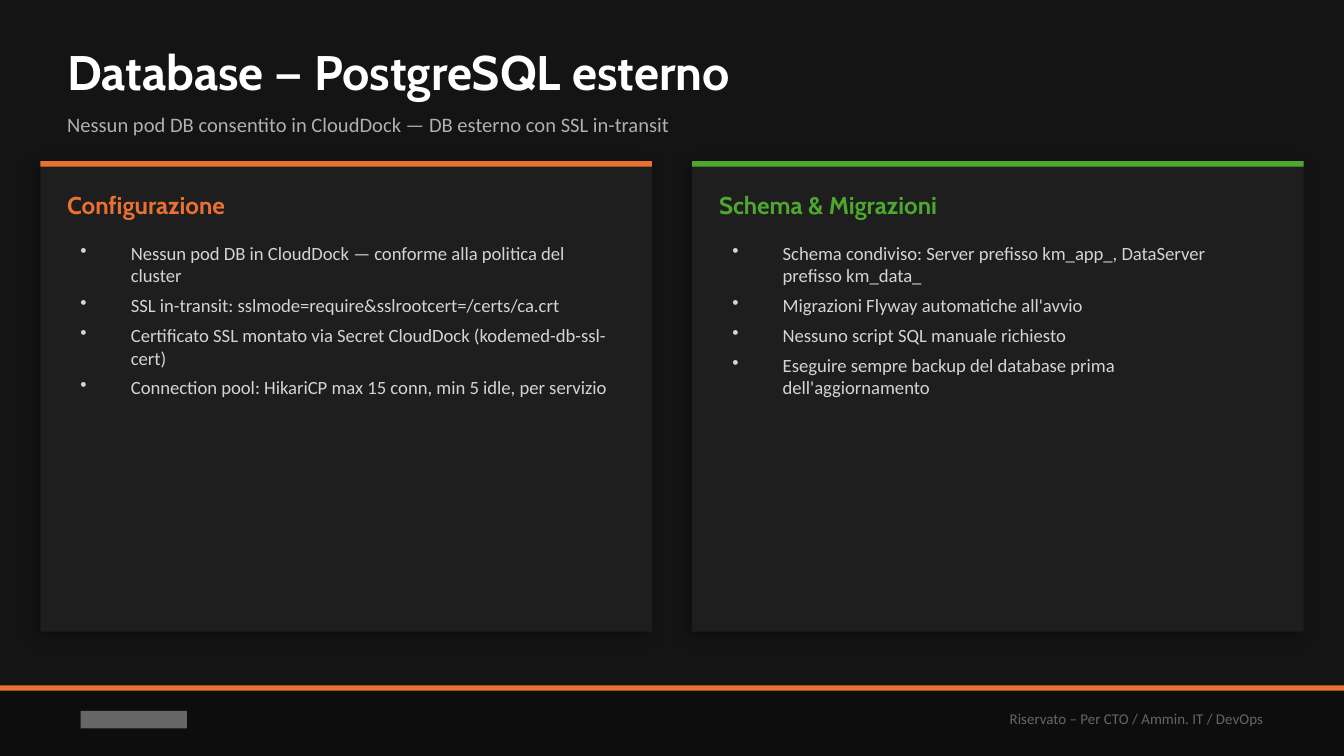
"""Build the external database slide with two topic cards."""
from dataclasses import dataclass

from lxml import etree
from pptx import Presentation
from pptx.dml.color import RGBColor
from pptx.enum.shapes import MSO_SHAPE
from pptx.enum.text import MSO_ANCHOR, PP_ALIGN
from pptx.oxml.ns import qn
from pptx.util import Pt

RECT = MSO_SHAPE.RECTANGLE
TOP, MIDDLE = MSO_ANCHOR.TOP, MSO_ANCHOR.MIDDLE
LEFT, RIGHT = PP_ALIGN.LEFT, PP_ALIGN.RIGHT
SCALE = 4572
WIDTH, HEIGHT = 2000, 1125


@dataclass(frozen=True)
class Theme:
    back: str = "141414"
    foot: str = "0D0D0D"
    card: str = "1E1E1E"
    orange: str = "E97132"
    green: str = "4EA72E"
    white: str = "FFFFFF"
    soft: str = "B0B0B0"
    body: str = "D4D4D4"
    dim: str = "666666"
    shade: str = "000000"
    head_font: str = "Cabin"
    body_font: str = "Calibri"
    title_size: int = 26
    head_size: int = 13
    lead_size: int = 11
    list_size: int = 10
    note_size: int = 8


def px(count):
    return count * SCALE


def write(para, text, *, size, color, font, bold=False):
    run = para.add_run()
    run.text = text
    run.font.size = Pt(size)
    run.font.name = font
    run.font.bold = bold
    run.font.color.rgb = RGBColor.from_string(color)


class Deck:
    def __init__(self, theme):
        self.theme = theme
        self.show = Presentation()
        self.show.slide_width = px(WIDTH)
        self.show.slide_height = px(HEIGHT)
        self.slide = self.show.slides.add_slide(self.show.slide_layouts[6])
        fill = self.slide.background.fill
        fill.solid()
        fill.fore_color.rgb = RGBColor.from_string(theme.back)

    def rect(self, area, color, shadow=False):
        shape = self.slide.shapes.add_shape(RECT, *map(px, area))
        shape.shadow.inherit = False
        shape.fill.solid()
        shape.fill.fore_color.rgb = RGBColor.from_string(color)
        shape.line.fill.background()
        if shadow:
            self.shade(shape)

    def shade(self, shape):
        effects = shape.element.spPr.find(qn("a:effectLst"))
        outer = etree.SubElement(
            effects, qn("a:outerShdw"), blurRad=str(Pt(8)), dist=str(Pt(3)),
            dir=str(135 * 60000), algn="bl", rotWithShape="0")
        tint = etree.SubElement(outer, qn("a:srgbClr"), val=self.theme.shade)
        etree.SubElement(tint, qn("a:alpha"), val="35000")

    def frame(self, area, anchor=MIDDLE, inset=True):
        frame = self.slide.shapes.add_textbox(*map(px, area)).text_frame
        frame.word_wrap = True
        frame.vertical_anchor = anchor
        frame.margin_left = frame.margin_right = px(20 if inset else 0)
        frame.margin_top = frame.margin_bottom = px(10 if inset else 0)
        return frame

    def label(self, area, text, align=LEFT, inset=False, **style):
        para = self.frame(area, inset=inset).paragraphs[0]
        para.alignment = align
        write(para, text, **style)

    def bullets(self, area, items):
        theme = self.theme
        frame = self.frame(area, TOP)
        for place, item in enumerate(items):
            para = frame.add_paragraph() if place else frame.paragraphs[0]
            props = para._p.get_or_add_pPr()
            props.set("marL", str(px(75)))
            props.set("indent", str(px(-75)))
            etree.SubElement(props, qn("a:buSzPct"), val="100000")
            etree.SubElement(props, qn("a:buChar"), char="•")
            para.space_after = Pt(4)
            write(para, item, size=theme.list_size, color=theme.body,
                  font=theme.body_font)

    def card(self, left, color, head, items):
        theme = self.theme
        self.rect((left, 240, 910, 700), theme.card, shadow=True)
        self.rect((left, 240, 910, 8), color)
        self.label((left + 40, 270, 830, 70), head, size=theme.head_size,
                   color=color, font=theme.head_font, bold=True)
        self.bullets((left + 40, 350, 830, 560), items)

    def footer(self, note):
        theme = self.theme
        self.rect((0, 1020, WIDTH, 105), theme.foot)
        self.rect((0, 1020, WIDTH, 8), theme.orange)
        self.rect((120, 1058, 158, 26), theme.dim)
        self.label((1100, 1030, 800, 80), note, align=RIGHT, inset=True,
                   size=theme.note_size, color=theme.dim, font=theme.body_font)


def main():
    theme = Theme()
    deck = Deck(theme)
    deck.footer("Riservato – Per CTO / Ammin. IT / DevOps")
    deck.label((100, 50, 1800, 110), "Database — PostgreSQL esterno",
               size=theme.title_size, color=theme.white,
               font=theme.head_font, bold=True)
    deck.label((100, 150, 1800, 70),
               "Nessun pod DB consentito in CloudDock — "
               "DB esterno con SSL in-transit",
               size=theme.lead_size, color=theme.soft, font=theme.body_font)
    cards = (
        (theme.orange, "Configurazione", (
            "Nessun pod DB in CloudDock — conforme alla politica del cluster",
            "SSL in-transit: sslmode=require&sslrootcert=/certs/ca.crt",
            "Certificato SSL montato via Secret CloudDock "
            "(kodemed-db-ssl-cert)",
            "Connection pool: HikariCP max 15 conn, min 5 idle, per servizio",
        )),
        (theme.green, "Schema & Migrazioni", (
            "Schema condiviso: Server prefisso km_app_, "
            "DataServer prefisso km_data_",
            "Migrazioni Flyway automatiche all'avvio",
            "Nessuno script SQL manuale richiesto",
            "Eseguire sempre backup del database prima dell'aggiornamento",
        )),
    )
    for place, (color, head, items) in enumerate(cards):
        deck.card(60 + place * 970, color, head, items)
    deck.show.save("out.pptx")


if __name__ == "__main__":
    main()
